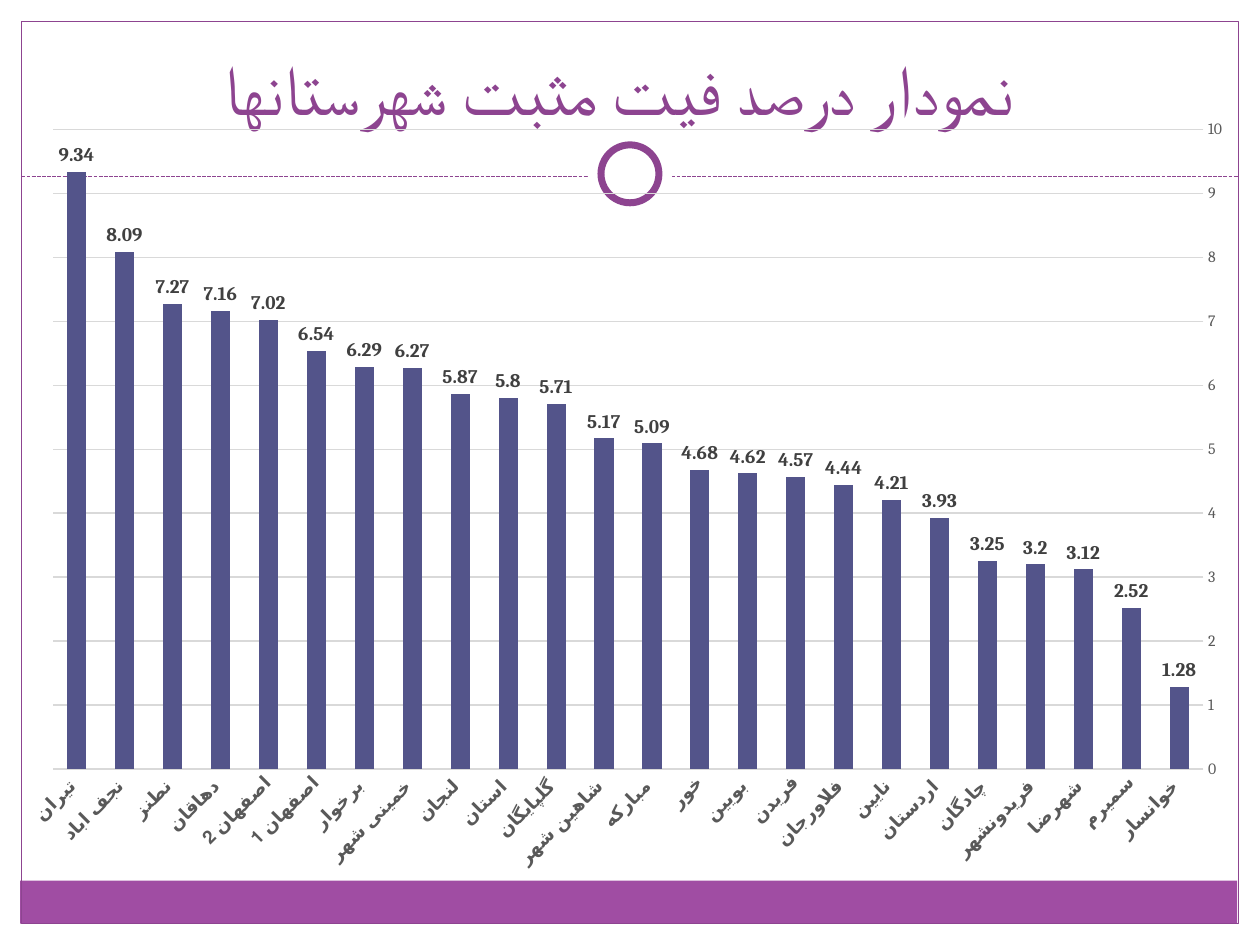
"""Build a slide with a column chart of positive FIT percentages by county."""
from lxml import etree
from pptx import Presentation
from pptx.chart.data import CategoryChartData
from pptx.dml.color import RGBColor
from pptx.enum.chart import XL_CHART_TYPE, XL_LABEL_POSITION, XL_TICK_MARK
from pptx.enum.dml import MSO_LINE
from pptx.enum.shapes import MSO_CONNECTOR, MSO_SHAPE
from pptx.enum.text import MSO_ANCHOR, PP_ALIGN
from pptx.oxml import parse_xml
from pptx.oxml.ns import nsdecls, qn
from pptx.util import Inches, Pt

TITLE = "نمودار درصد فیت مثبت شهرستانها "
COUNTIES = [
    ("خوانسار ", 1.28), ("سمیرم", 2.52), ("شهرضا ", 3.12), ("فریدونشهر ", 3.2),
    ("چادگان ", 3.25), ("اردستان ", 3.93), ("نایین ", 4.21), ("فلاورجان ", 4.44),
    ("فریدن", 4.57), ("بویین ", 4.62), ("خور", 4.68), ("مبارکه ", 5.09),
    ("شاهین شهر ", 5.17), ("گلپایگان ", 5.71), ("استان ", 5.8), ("لنجان ", 5.87),
    ("خمینی شهر ", 6.27), ("برخوار ", 6.29), ("اصفهان 1", 6.54), ("اصفهان 2", 7.02),
    ("دهاقان ", 7.16), ("نطنز ", 7.27), ("نجف اباد ", 8.09), ("تیران ", 9.34),
]
FONT = "Cambria"
COLORS = {"white": "FFFFFF", "band": "A04DA3", "accent": "8D4490", "bar": "53548A",
          "axis": "595959", "label": "404040", "grid": "D9D9D9", "text": "000000"}
WIDTH, HEIGHT, MARGIN = 10, 7.5, 0.17
RULE_Y = 1.4
PLOT = {"x": 0.0365, "y": 0.032, "w": 0.929, "h": 0.82}


def rgb(name):
    return RGBColor.from_string(COLORS[name])


def add_box(slide, kind, box, fill=None, line=None, weight=0.75):
    sp = slide.shapes.add_shape(kind, *map(Inches, box))
    sp.shadow.inherit = False
    if fill:
        sp.fill.solid()
        sp.fill.fore_color.rgb = rgb(fill)
    else:
        sp.fill.background()
    if line:
        sp.line.color.rgb = rgb(line)
        sp.line.width = Pt(weight)
    else:
        sp.line.fill.background()


def add_ring_part(slide, size, **style):
    box = (WIDTH / 2 - size / 2, 1.38 - size / 2, size, size)
    add_box(slide, MSO_SHAPE.OVAL, box, "white", **style)


def add_frame(slide):
    inner = WIDTH - 2 * MARGIN
    for box in ((0, 0, WIDTH, 1.52), (0, 0, MARGIN, HEIGHT),
                (WIDTH - MARGIN, 0, MARGIN, HEIGHT)):
        add_box(slide, MSO_SHAPE.RECTANGLE, box, "white")
    add_box(slide, MSO_SHAPE.RECTANGLE, (0.16, 6.99, inner, 0.34), "band")
    add_box(slide, MSO_SHAPE.RECTANGLE, (MARGIN, MARGIN, inner, HEIGHT - 2 * MARGIN),
            line="accent")
    rule = slide.shapes.add_connector(MSO_CONNECTOR.STRAIGHT, Inches(MARGIN), Inches(RULE_Y),
                                      Inches(WIDTH - MARGIN), Inches(RULE_Y))
    rule.line.color.rgb = rgb("accent")
    rule.line.width = Pt(0.75)
    rule.line.dash_style = MSO_LINE.SQUARE_DOT
    etree.SubElement(rule._element.spPr, qn("a:effectLst"))
    add_ring_part(slide, 0.67)
    add_ring_part(slide, 0.46, line="accent", weight=4)


def add_title(slide):
    box = slide.shapes.add_textbox(*map(Inches, (0.31, 0.25, 9.33, 0.83)))
    tf = box.text_frame
    tf.word_wrap = True
    tf.vertical_anchor = MSO_ANCHOR.BOTTOM
    p = tf.paragraphs[0]
    p.text = TITLE
    p.alignment = PP_ALIGN.CENTER
    set_font(p.font, 40, "accent")
    props = p._p.get_or_add_pPr().find(qn("a:defRPr"))
    etree.SubElement(props, qn("a:cs")).set("typeface", FONT)


def set_font(font, size, color, bold=False):
    font.name = FONT
    font.size = Pt(size)
    font.bold = bold
    font.color.rgb = rgb(color)


def style_axis(axis, size, bold=False):
    axis.major_tick_mark = axis.minor_tick_mark = XL_TICK_MARK.NONE
    axis.format.line.fill.background()
    set_font(axis.tick_labels.font, size, "axis", bold)


def add_chart(slide):
    data = CategoryChartData()
    data.categories = [name for name, _ in COUNTIES]
    data.add_series("Series 1", [value for _, value in COUNTIES])
    chart = slide.shapes.add_chart(XL_CHART_TYPE.COLUMN_CLUSTERED,
                                   *map(Inches, (0.06, 0.83, 9.83, 6.19)), data).chart
    chart.has_legend = chart.has_title = False
    set_font(chart.font, 10, "text")

    cats = chart.category_axis
    style_axis(cats, 10.5, True)
    cats.reverse_order = True
    cats._element.find(qn("c:txPr")).find(qn("a:bodyPr")).set("rot", "-2700000")

    vals = chart.value_axis
    style_axis(vals, 9)
    vals.minimum_scale, vals.maximum_scale, vals.major_unit = 0, 10, 1
    vals.major_gridlines.format.line.color.rgb = rgb("grid")
    vals.major_gridlines.format.line.width = Pt(0.75)

    plot = chart.plots[0]
    plot.gap_width = 150
    plot.vary_by_categories = False
    bars = plot.series[0].format.fill
    bars.solid()
    bars.fore_color.rgb = rgb("bar")
    plot.has_data_labels = True
    labels = plot.data_labels
    labels.show_value = True
    labels.position = XL_LABEL_POSITION.OUTSIDE_END
    set_font(labels.font, 11, "label", True)

    modes = "".join(f'<c:{k}Mode val="edge"/>' for k in "xy")
    sizes = "".join(f'<c:{k} val="{v}"/>' for k, v in PLOT.items())
    area = chart._chartSpace.chart.plotArea
    for old in area.findall(qn("c:layout")):
        area.remove(old)
    area.insert(0, parse_xml(
        f'<c:layout {nsdecls("c")}><c:manualLayout><c:layoutTarget val="inner"/>'
        f'{modes}{sizes}</c:manualLayout></c:layout>'))


def main():
    prs = Presentation()
    prs.slide_width, prs.slide_height = Inches(WIDTH), Inches(HEIGHT)
    slide = prs.slides.add_slide(prs.slide_layouts[6])
    add_frame(slide)
    add_title(slide)
    add_chart(slide)
    prs.save("out.pptx")


if __name__ == "__main__":
    main()
